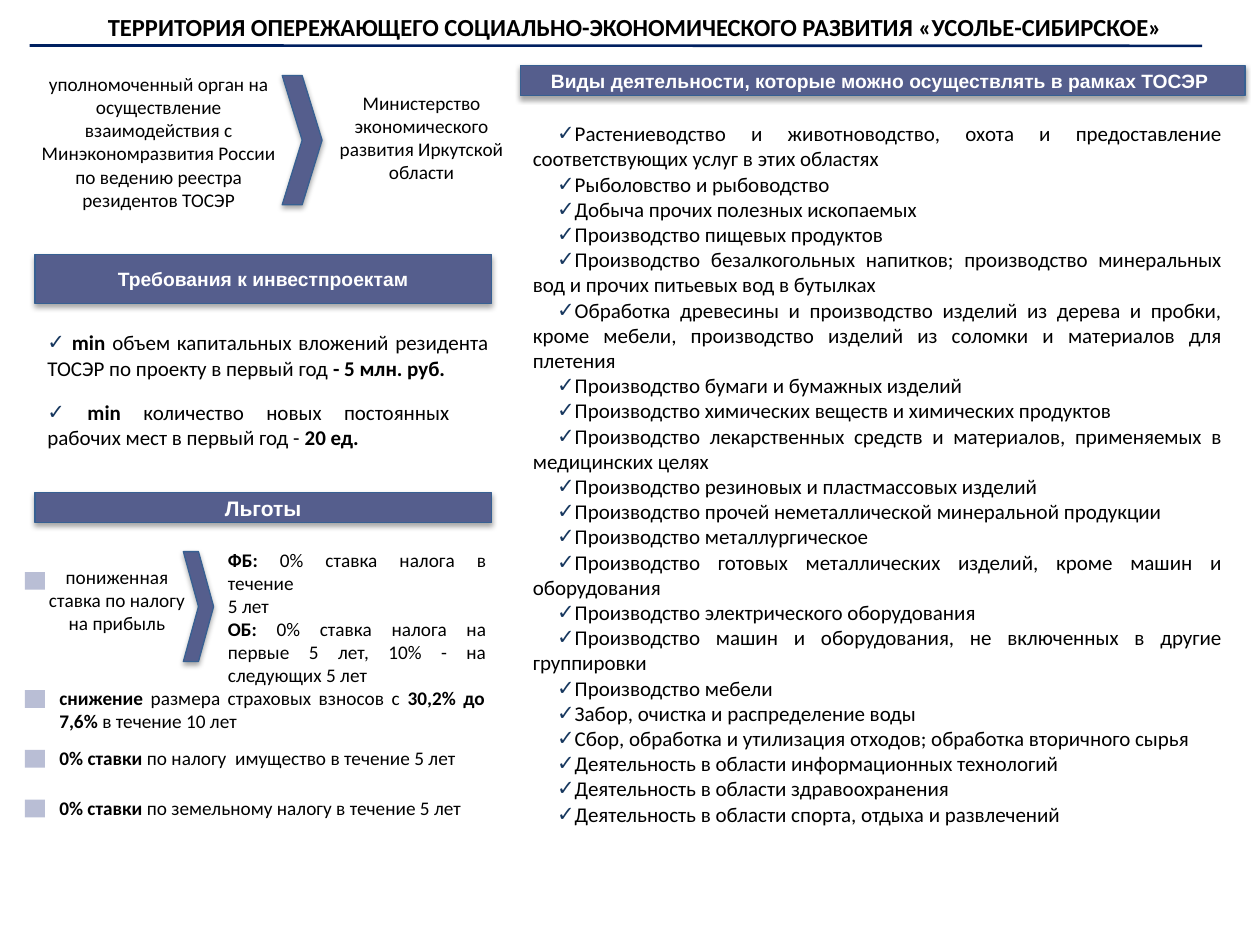
from lxml import etree
from pptx import Presentation
from pptx.dml.color import RGBColor
from pptx.enum.shapes import MSO_CONNECTOR, MSO_SHAPE
from pptx.enum.text import MSO_ANCHOR, MSO_AUTO_SIZE, PP_ALIGN
from pptx.oxml.ns import qn
from pptx.util import Pt

CENTER, JUSTIFY = PP_ALIGN.CENTER, PP_ALIGN.JUSTIFY
TOP, MIDDLE = MSO_ANCHOR.TOP, MSO_ANCHOR.MIDDLE
GROW, FIXED = MSO_AUTO_SIZE.SHAPE_TO_FIT_TEXT, MSO_AUTO_SIZE.NONE
RECT, CHEVRON = MSO_SHAPE.RECTANGLE, MSO_SHAPE.CHEVRON
NBSP = chr(160)


def color(hex_value):
    return RGBColor.from_string(hex_value)


def child(parent, tag, **attrs):
    el = etree.SubElement(parent, qn(tag))
    for name, value in attrs.items():
        el.set(name, str(value))
    return el


def add_check(p, indent):
    pPr = p._p.get_or_add_pPr()
    pPr.set("marL", "0")
    pPr.set("indent", str(Pt(indent)))
    child(child(pPr, "a:buClr"), "a:srgbClr", val="17375E")
    child(pPr, "a:buFont", typeface="Arial")
    child(pPr, "a:buChar", char="✓")


def write(tf, *paragraphs, size=11, font="Calibri", ink="000000", bold=False,
          align=CENTER, check=None):
    """Fill a frame; **marks** switch bold on and off, a newline breaks the line."""
    for i, text in enumerate(paragraphs):
        p = tf.paragraphs[0] if i == 0 else tf.add_paragraph()
        p.alignment = align
        if check is not None:
            add_check(p, check)
        for n, part in enumerate(text.split("**")):
            for k, piece in enumerate(part.split("\n")):
                if k:
                    p.add_line_break()
                    child(p._p[-1], "a:rPr", sz=size * 100)
                if piece:
                    r = p.add_run()
                    r.text = piece
                    r.font.name, r.font.size = font, Pt(size)
                    r.font.bold = bold or n % 2 == 1
                    r.font.color.rgb = color(ink)


class Page:
    fill, edge, marker, rule = "555E8D", "376092", "B9BED5", "002060"

    def __init__(self, prs):
        self.s = prs.slides.add_slide(prs.slide_layouts[5])

    def frame(self, sp, side=7.2, anchor=TOP, wrap=True, size=GROW):
        tf = sp.text_frame
        tf.word_wrap, tf.auto_size, tf.vertical_anchor = wrap, size, anchor
        tf.margin_left = tf.margin_right = Pt(side)
        tf.margin_top = tf.margin_bottom = Pt(3.6)
        return tf

    def title(self, x, y, w, h, text):
        sp = self.s.shapes.title
        sp.left, sp.top, sp.width, sp.height = map(Pt, (x, y, w, h))
        write(self.frame(sp, size=FIXED), text, size=14, bold=True)

    def line(self, x1, y1, x2, y2):
        ln = self.s.shapes.add_connector(MSO_CONNECTOR.STRAIGHT, *map(Pt, (x1, y1, x2, y2)))
        ln.line.color.rgb, ln.line.width = color(self.rule), Pt(1.5)
        child(ln._element.spPr, "a:effectLst")

    def text(self, x, y, w, h, *paragraphs, side=2.9, **fmt):
        sp = self.s.shapes.add_textbox(*map(Pt, (x, y, w, h)))
        write(self.frame(sp, side), *paragraphs, **fmt)

    def square(self, y):
        sp = self.s.shapes.add_shape(RECT, *map(Pt, (14.2, y, 11.5, 10.1)))
        sp.shadow.inherit = False
        sp.fill.solid()
        sp.fill.fore_color.rgb = color(self.marker)
        sp.line.fill.background()

    def raised(self, kind, x, y, w, h):
        sp = self.s.shapes.add_shape(kind, *map(Pt, (x, y, w, h)))
        sp.fill.solid()
        sp.fill.fore_color.rgb = color(self.fill)
        sp.line.color.rgb, sp.line.width = color(self.edge), Pt(0.75)
        sp.shadow.inherit = False
        effects = sp._element.spPr.find(qn("a:effectLst"))
        shadow = child(effects, "a:outerShdw", blurRad=Pt(3.1), dist=Pt(1.8),
                       dir=5400000, rotWithShape=0)
        child(child(shadow, "a:srgbClr", val="000000"), "a:alpha", val=35000)
        return sp

    def banner(self, x, y, w, h, text, size=11):
        sp = self.raised(RECT, x, y, w, h)
        tf = self.frame(sp, anchor=MIDDLE, wrap=False, size=FIXED)
        write(tf, text, size=size, font="Arial", ink="FFFFFF", bold=True)


ACTIVITIES = [
    "Растениеводство и животноводство, охота и предоставление соответствующих услуг в этих областях",
    "Рыболовство и рыбоводство",
    "Добыча прочих полезных ископаемых",
    "Производство пищевых продуктов",
    "Производство безалкогольных напитков; производство минеральных вод и прочих питьевых вод в бутылках",
    "Обработка древесины и производство изделий из дерева и пробки, кроме мебели, "
    "производство изделий из соломки и материалов для плетения",
    "Производство бумаги и бумажных изделий",
    "Производство химических веществ и химических продуктов",
    "Производство лекарственных средств и материалов, применяемых в медицинских целях",
    "Производство резиновых и пластмассовых изделий",
    "Производство прочей неметаллической минеральной продукции",
    "Производство металлургическое",
    "Производство готовых металлических изделий, кроме машин и оборудования",
    "Производство электрического оборудования",
    "Производство машин и оборудования, не включенных в другие группировки",
    "Производство мебели",
    "Забор, очистка и распределение воды",
    "Сбор, обработка и утилизация отходов; обработка вторичного сырья",
    "Деятельность в области информационных технологий",
    "Деятельность в области здравоохранения",
    "Деятельность в области спорта, отдыха и развлечений",
]
# top, width, height, text
REQUIREMENTS = [
    (185, 266.4, 36, " **min **объем капитальных вложений резидента ТОСЭР по проекту "
                     "в первый год **- 5 млн. руб.**"),
    (224.6, 244, 36, " **min **количество новых постоянных рабочих мест в первый год - **20 ед.**"),
]
BENEFITS = [
    (388.8, 249, 33.8, "**снижение** размера страховых взносов с **30,2% до 7,6% **в течение 10 лет"),
    (423, 238.3, 20.9, "**0% ставки **по налогу  имущество в течение 5 лет"),
    (451.4, 249, 20.9, "**0% ставки **по земельному налогу в течение 5 лет"),
]


def main():
    prs = Presentation()
    prs.slide_width, prs.slide_height = Pt(720), Pt(540)
    page = Page(prs)

    # Heading
    page.title(20, 3.2, 686, 24.5,
               "ТЕРРИТОРИЯ ОПЕРЕЖАЮЩЕГО СОЦИАЛЬНО-ЭКОНОМИЧЕСКОГО РАЗВИТИЯ «УСОЛЬЕ-СИБИРСКОЕ»")
    page.line(17, 26, 686.9, 26.2)

    # Authorised body
    page.text(14, 37.8, 153.4, 87.1,
              "уполномоченный орган на осуществление взаимодействия с Минэкономразвития "
              "России по ведению реестра резидентов ТОСЭР")
    page.raised(CHEVRON, 161.3, 43.2, 22.8, 73.8)
    page.text(189.8, 48.7, 102.2, 60.5, "Министерство экономического развития Иркутской области")

    # Project requirements
    page.banner(20, 145.4, 260.8, 28.1, "Требования к инвестпроектам")
    for y, w, h, text in REQUIREMENTS:
        page.text(20, y, w, h, text, side=7.2, size=12, align=JUSTIFY, check=0)

    # Benefits
    page.banner(20, 281.5, 260.8, 17.3, "Льготы", size=12)
    page.text(23.3, 319.2, 87.1, 47.5, "пониженная ставка по налогу на прибыль")
    page.raised(CHEVRON, 104.8, 315.2, 17.3, 62.8)
    # The hard space keeps the last word off the full first line
    page.text(127.4, 309.6, 153.4, 74.2,
              f"**ФБ: **0% ставка налога в течение{NBSP}\n5 лет",
              "**ОБ: **0% ставка налога на первые 5 лет, 10% - на следующих 5 лет",
              align=JUSTIFY)
    page.square(326.9)
    for y, w, h, text in BENEFITS:
        page.text(31, y, w, h, text, align=JUSTIFY)
        page.square(y + 5.6)

    # Permitted activities
    page.banner(297.4, 37.4, 414, 17.3,
                "Виды деятельности, которые можно осуществлять в рамках ТОСЭР ")
    page.text(297.4, 65.5, 408.2, 414.7, *ACTIVITIES, side=7.2, size=12,
              align=JUSTIFY, check=13.9)

    prs.save("out.pptx")


if __name__ == "__main__":
    main()
